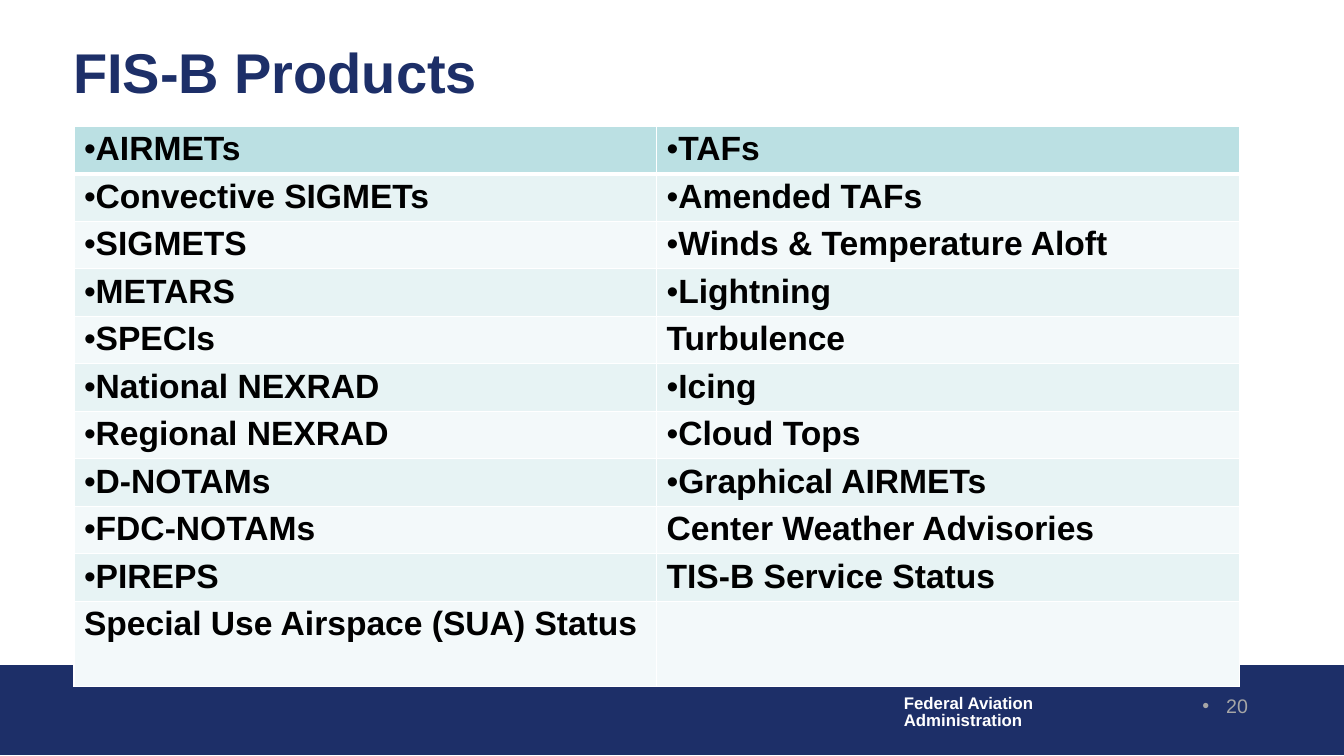
"""Build the FIS-B Products slide."""
from dataclasses import dataclass

from lxml.etree import SubElement
from pptx import Presentation
from pptx.dml.color import RGBColor
from pptx.enum.shapes import MSO_SHAPE
from pptx.enum.text import MSO_ANCHOR, PP_ALIGN
from pptx.oxml import parse_xml
from pptx.oxml.ns import nsdecls, qn
from pptx.slide import Slide
from pptx.table import _Cell
from pptx.text.text import _Paragraph
from pptx.util import Pt

NAVY = RGBColor(0x1D, 0x2F, 0x68)
WHITE = RGBColor(0xFF, 0xFF, 0xFF)
BLACK = RGBColor(0x00, 0x00, 0x00)
GRAY = RGBColor(0xA6, 0xA6, 0xA6)
HEAD = RGBColor(0xBB, 0xE0, 0xE3)
BANDS = (RGBColor(0xF3, 0xF9, 0xFA), RGBColor(0xE7, 0xF3, 0xF4))


@dataclass
class Style:
    size: float
    color: RGBColor
    bold: bool = True


@dataclass
class Item:
    text: str
    dot: bool = True


TITLE = Style(40, NAVY)
BODY = Style(24, BLACK)
FOOT = Style(12, WHITE)
PAGE = Style(14, GRAY, False)

ROWS = [
    (Item("AIRMETs"), Item("TAFs")),
    (Item("Convective SIGMETs"), Item("Amended TAFs")),
    (Item("SIGMETS"), Item("Winds & Temperature Aloft")),
    (Item("METARS"), Item("Lightning")),
    (Item("SPECIs"), Item("Turbulence", False)),
    (Item("National NEXRAD"), Item("Icing")),
    (Item("Regional NEXRAD"), Item("Cloud Tops")),
    (Item("D-NOTAMs"), Item("Graphical AIRMETs")),
    (Item("FDC-NOTAMs"), Item("Center Weather Advisories", False)),
    (Item("PIREPS"), Item("TIS-B Service Status", False)),
    (Item("Special Use Airspace (SUA) Status", False), Item("", False)),
]


def write(para: _Paragraph, text: str, style: Style) -> None:
    run = para.add_run()
    run.text = text
    font = run.font
    font.name = "Arial"
    font.size = Pt(style.size)
    font.bold = style.bold
    font.color.rgb = style.color


def bullet(para: _Paragraph, hang: float = 0) -> None:
    props = para._p.get_or_add_pPr()
    props.set("marL", str(Pt(hang)))
    props.set("indent", str(-Pt(hang)))
    SubElement(props, qn("a:buFont"), typeface="Arial")
    SubElement(props, qn("a:buChar"), char="•")


def border(cell: _Cell, top: float, base: float) -> None:
    props = cell._tc.get_or_add_tcPr()
    sides = {"lnL": 1, "lnR": 1, "lnT": top, "lnB": base}
    for spot, (tag, width) in enumerate(sides.items()):
        props.insert(spot, parse_xml(
            f'<a:{tag} {nsdecls("a")} w="{Pt(width)}"><a:solidFill>'
            f'<a:srgbClr val="{WHITE}"/></a:solidFill></a:{tag}>'))


def fill_cell(cell: _Cell, item: Item, row: int) -> None:
    cell.fill.solid()
    cell.fill.fore_color.rgb = BANDS[row % 2] if row else HEAD
    border(cell, 3 if row == 1 else 1, 1 if row else 3)
    cell.margin_top, cell.margin_bottom = Pt(2.9), Pt(1.5)
    if item.text:
        para = cell.text_frame.paragraphs[0]
        if item.dot:
            bullet(para)
        write(para, item.text, BODY)


def add_title(slide: Slide) -> None:
    title = slide.shapes.title
    title.left, title.top = Pt(45), Pt(26.8)
    title.width, title.height = Pt(889), Pt(48.2)
    frame = title.text_frame
    frame.vertical_anchor = MSO_ANCHOR.MIDDLE
    para = frame.paragraphs[0]
    para.alignment = PP_ALIGN.LEFT
    write(para, "FIS-B Products", TITLE)


def add_band(slide: Slide) -> None:
    band = slide.shapes.add_shape(
        MSO_SHAPE.RECTANGLE, 0, Pt(475.2), Pt(960), Pt(64.1))
    band.shadow.inherit = False
    band.fill.solid()
    band.fill.fore_color.rgb = NAVY
    band.line.color.rgb = NAVY
    band.line.width = Pt(0.75)


def add_foot(slide: Slide) -> None:
    box = slide.shapes.add_textbox(Pt(638.6), Pt(493.2), Pt(108), Pt(31.7))
    frame = box.text_frame
    frame.word_wrap = False
    for row, text in enumerate(("Federal Aviation", "Administration")):
        para = frame.add_paragraph() if row else frame.paragraphs[0]
        para.line_spacing = 0.85
        write(para, text, FOOT)


def add_page(slide: Slide) -> None:
    box = slide.shapes.add_textbox(Pt(782.6), Pt(491.8), Pt(116), Pt(36))
    box.text_frame.word_wrap = True
    para = box.text_frame.paragraphs[0]
    para.alignment = PP_ALIGN.RIGHT
    bullet(para, 17)
    write(para, "20", PAGE)


def add_list(slide: Slide) -> None:
    table = slide.shapes.add_table(
        len(ROWS), 2, Pt(52.8), Pt(90.2), Pt(832.4), Pt(400.5)).table
    table.first_row = table.horz_banding = False
    for col in table.columns:
        col.width = Pt(416.2)
    for row, items in enumerate(ROWS):
        last = row == len(ROWS) - 1
        table.rows[row].height = Pt(61 if last else 33.95)
        for col, item in enumerate(items):
            fill_cell(table.cell(row, col), item, row)


def main() -> None:
    deck = Presentation()
    deck.slide_width, deck.slide_height = Pt(960), Pt(540)
    slide = deck.slides.add_slide(deck.slide_layouts[5])
    add_band(slide)
    add_foot(slide)
    add_title(slide)
    add_list(slide)
    add_page(slide)
    deck.save("out.pptx")


if __name__ == "__main__":
    main()
